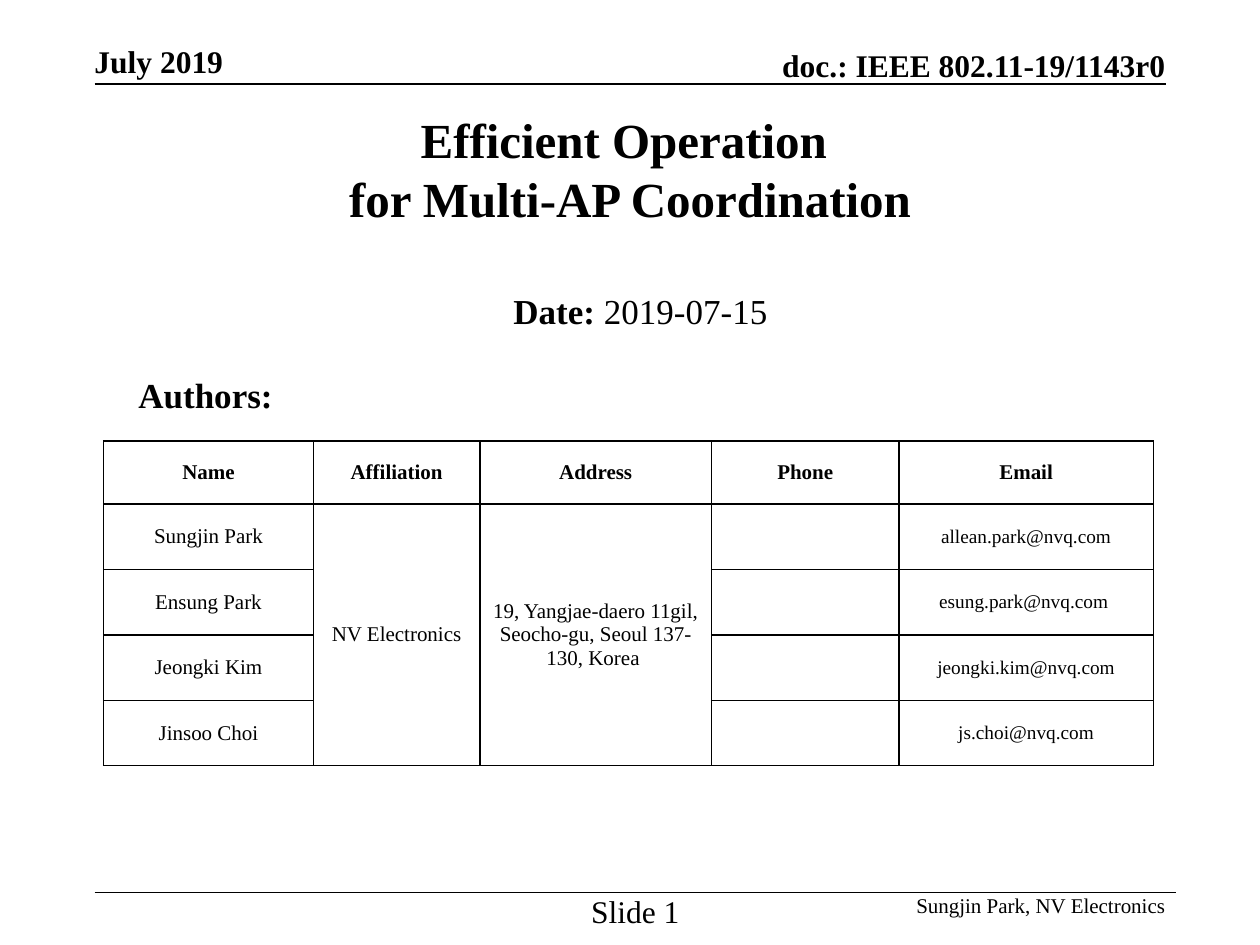
import pptx
import pptx.dml.color
import pptx.enum.shapes
import pptx.enum.text
import pptx.oxml
import pptx.oxml.ns
import pptx.util

Pt = pptx.util.Pt
Align = pptx.enum.text.PP_ALIGN
Anchor = pptx.enum.text.MSO_ANCHOR
BLACK = pptx.dml.color.RGBColor(0, 0, 0)
FONT = "Times New Roman"
HEADS = ["Name", "Affiliation", "Address", "Phone", "Email"]
FIRM = "NV Electronics"
PLACE = "19, Yangjae-daero 11gil, Seocho-gu, Seoul 137-130, Korea "
PEOPLE = [
    ("Sungjin Park", "allean.park@nvq.com"),
    ("Ensung Park", "esung.park@nvq.com "),
    ("Jeongki Kim", "jeongki.kim@nvq.com"),
    ("Jinsoo Choi", "js.choi@nvq.com"),
]
WIDTHS = [120, 95, 132.5, 107, 145.5]


def write(frame, text, size=12, bold=False, align=Align.LEFT):
    para = frame.paragraphs[0]
    para.alignment = align
    for index, part in enumerate(text.split("\n")):
        if index:
            para.add_line_break()
        run = para.add_run()
        run.text = part
        run.font.name = FONT
        run.font.size = Pt(size)
        run.font.bold = bold
        run.font.color.rgb = BLACK


def add_box(slide, box, inset=(0, 0), anchor=Anchor.TOP, wrap=True):
    frame = slide.shapes.add_textbox(*map(Pt, box)).text_frame
    frame.margin_left = frame.margin_right = Pt(inset[0])
    frame.margin_top = frame.margin_bottom = Pt(inset[1])
    frame.vertical_anchor = anchor
    frame.word_wrap = wrap
    return frame


def add_rule(slide, left, top, width):
    line = slide.shapes.add_connector(
        pptx.enum.shapes.MSO_CONNECTOR.STRAIGHT,
        Pt(left), Pt(top), Pt(left + width), Pt(top))
    line.line.color.rgb = BLACK
    line.line.width = Pt(1)
    props = line._element.spPr
    props.append(pptx.oxml.parse_xml(
        f"<a:effectLst {pptx.oxml.ns.nsdecls('a')}/>"))


def add_header(slide, left, top, width, height):
    date = add_box(slide, (left, top, 144, 21.6))
    write(date, "July 2019", size=18, bold=True)
    code = add_box(slide, (left + width - 258, top + 2.3, 258, 21.6),
                   anchor=Anchor.BOTTOM, wrap=False)
    write(code, "doc.: IEEE 802.11-19/1143r0", size=18, bold=True,
          align=Align.RIGHT)
    add_rule(slide, left, top + height, width)


def add_footer(slide, left, top, width):
    add_rule(slide, left, top, width)
    page = add_box(slide, (left + 279, top, 60, 21.6), wrap=False)
    write(page, "Slide 1", size=18, align=Align.CENTER)
    name = add_box(slide, (left + 395, top, 217, 14.4))
    write(name, f"Sungjin Park, {FIRM}", align=Align.RIGHT)


def add_title(slide, left, top, width):
    inset = (7.2, 3.6)
    title = add_box(slide, (left, top, width, 84), inset, Anchor.MIDDLE)
    write(title, "Efficient Operation \nfor Multi-AP Coordination", size=28,
          bold=True, align=Align.CENTER)
    date = add_box(slide, (left + 6, top + 108, width, 30), inset)
    write(date, "Date: ", size=20, bold=True, align=Align.CENTER)
    write(date, "2019-07-15", size=20, align=Align.CENTER)
    label = add_box(slide, (left + 18, top + 156, 108, 19.5), inset)
    write(label, "Authors:", size=20, bold=True)


def style_cell(cell, head):
    cell.vertical_anchor = Anchor.MIDDLE
    cell.margin_left = cell.margin_right = Pt(7.2 if head else 5)
    cell.margin_top = cell.margin_bottom = Pt(3.6 if head else 0)
    props = cell._tc.get_or_add_tcPr()
    for side in "LRTB":
        props.append(pptx.oxml.parse_xml(
            f"<a:ln{side} {pptx.oxml.ns.nsdecls('a')} w='{Pt(1)}'>"
            f"<a:solidFill><a:srgbClr val='{BLACK}'/></a:solidFill>"
            f"</a:ln{side}>"))
    cell.fill.background()


def add_authors(slide, left, top, width, height):
    rows = [HEADS]
    for index, (name, mail) in enumerate(PEOPLE):
        shared = ("", "") if index else (FIRM, PLACE)
        rows.append([name, *shared, "", mail])
    table = slide.shapes.add_table(
        len(rows), len(HEADS), Pt(left), Pt(top), Pt(width), Pt(height)).table
    for column, size in zip(table.columns, WIDTHS):
        column.width = Pt(size)
    for r, row in enumerate(rows):
        table.rows[r].height = Pt((height - 36) / len(PEOPLE) if r else 36)
        for c, text in enumerate(row):
            cell = table.cell(r, c)
            style_cell(cell, r == 0)
            if text:
                write(cell.text_frame, text, size=11 if r and c == 4 else 12,
                      bold=r == 0, align=Align.CENTER)
    for c in (1, 2):
        table.cell(1, c).merge(table.cell(len(PEOPLE), c))


def main():
    deck = pptx.Presentation()
    deck.slide_width, deck.slide_height = Pt(720), Pt(540)
    slide = deck.slides.add_slide(deck.slide_layouts[6])
    add_header(slide, 54, 24, 612, 24)
    add_title(slide, 54, 54, 612)
    add_authors(slide, 59.2, 252, sum(WIDTHS), 185.6)
    add_footer(slide, 54, 510, 618)
    deck.save("out.pptx")


if __name__ == "__main__":
    main()
